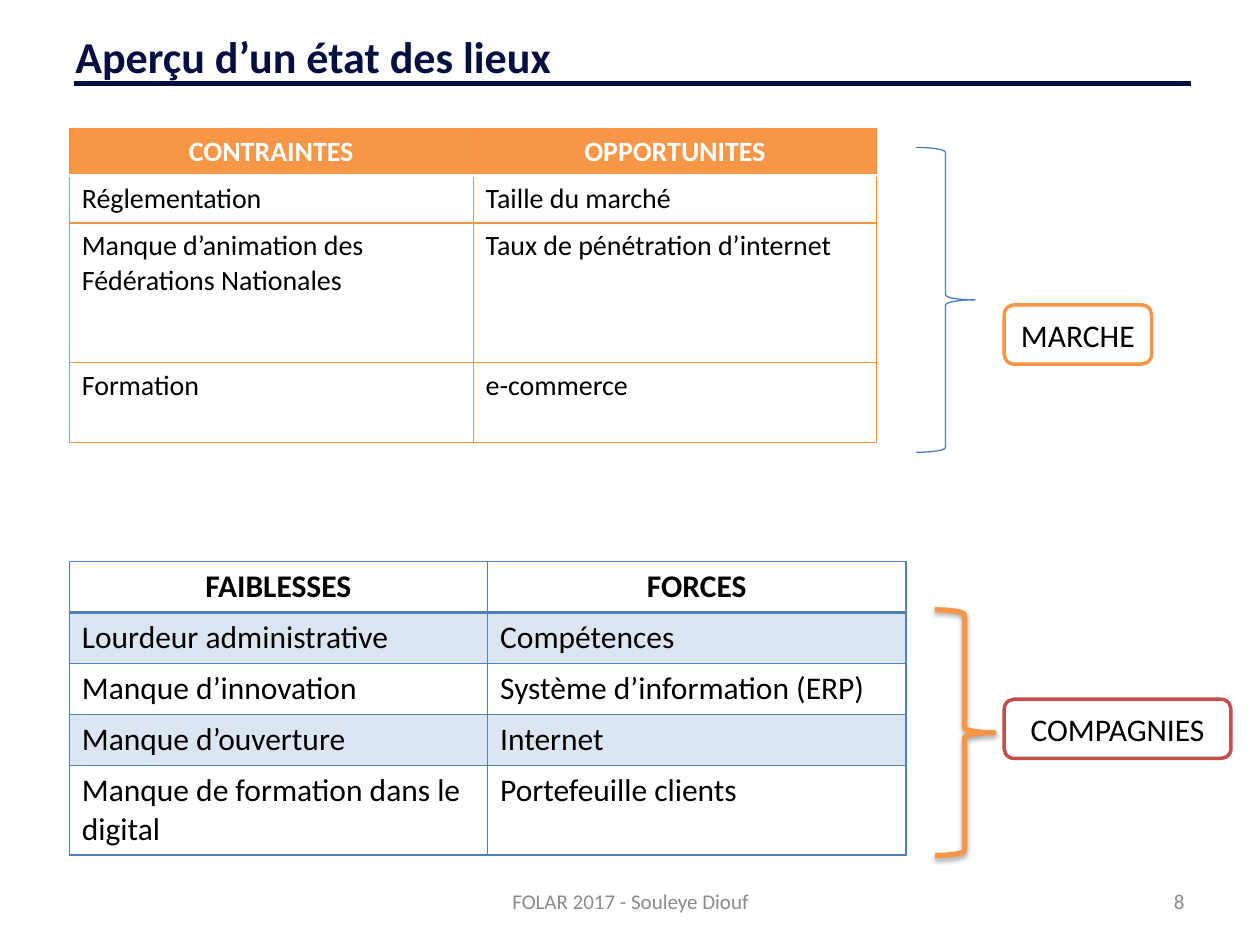
"""Build a slide of market and company strengths and limits."""
from lxml import etree
from pptx import Presentation
from pptx.dml.color import RGBColor
from pptx.enum.shapes import MSO_CONNECTOR, MSO_SHAPE
from pptx.enum.text import MSO_ANCHOR, PP_ALIGN
from pptx.oxml.ns import qn
from pptx.util import Inches, Pt

LINE, BRACE, ROUND = MSO_CONNECTOR.STRAIGHT, MSO_SHAPE.RIGHT_BRACE, MSO_SHAPE.ROUNDED_RECTANGLE
LEFT, MID, RIGHT = PP_ALIGN.LEFT, PP_ALIGN.CENTER, PP_ALIGN.RIGHT
CORE, TOP = MSO_ANCHOR.MIDDLE, MSO_ANCHOR.TOP
WIDE, HIGH = Inches(10), Inches(7.5)

THEME = {
    "font": "Calibri", "navy": "030F40", "white": "FFFFFF", "black": "000000",
    "gray": "8C8C8C", "amber": "F79646", "rust": "F69240", "blue": "4F81BD",
    "steel": "4B7EBC", "pale": "DCE6F2", "red": "C0504D",
    "title": 25.2, "large": 18, "body": 16, "small": 12,
}

TEXTS = [
    ("Aperçu d’un état des lieux", (5, 2.8, 90, 6.13), "title", "navy", True, LEFT),
    ("8", (71.7, 92.67, 23.3, 5.33), "small", "gray", False, RIGHT),
    ("FOLAR 2017 - Souleye Diouf", (34.2, 92.67, 31.7, 5.33), "small", "gray", False, MID),
]
RULE = (5.9, 8.8, 94.5, 8.8)
TABLES = [
    {
        "box": (5.5, 13.6, 64.1, 33.2), "rows": (5, 5, 14.8, 8.4), "size": "body",
        "edge": ("rust", 0.75), "base": ("white", 2), "ink": "white",
        "fills": ("amber", "white", "white", "white"),
        "cells": [
            ("CONTRAINTES", "OPPORTUNITES"),
            ("Réglementation", "Taille du marché"),
            ("Manque d’animation des Fédérations Nationales", "Taux de pénétration d’internet"),
            ("Formation", "e-commerce"),
        ],
    },
    {
        "box": (5.5, 59.4, 66.4, 31.1), "rows": (5.4, 5.4, 5.4, 5.4, 9.5), "size": "large",
        "edge": ("blue", 1), "base": ("blue", 2), "ink": "black",
        "fills": (None, "pale", None, "pale", None),
        "cells": [
            ("FAIBLESSES", "FORCES"),
            ("Lourdeur administrative", "Compétences"),
            ("Manque d’innovation", "Système d’information (ERP)"),
            ("Manque d’ouverture", "Internet"),
            ("Manque de formation dans le digital", "Portefeuille clients"),
        ],
    },
]
SHAPES = [
    (BRACE, (72.7, 15.6, 4.7, 32.27), "steel", 0.75, None),
    (ROUND, (79.7, 32.27, 11.7, 6.27), "amber", 2, "MARCHE"),
    (BRACE, (74.2, 64.53, 4.7, 26), "amber", 3, None),
    (ROUND, (79.7, 74, 18, 6.27), "red", 2, "COMPAGNIES"),
]
SHADE = {"blurRad": Pt(3.1), "dist": Pt(1.8), "dir": 5400000, "rotWithShape": 0}


def tone(name):
    return RGBColor.from_string(THEME[name])


def place(box):
    return [int(part * side / 100) for part, side in zip(box, (WIDE, HIGH) * 2)]


def node(host, tag, **attrs):
    return etree.SubElement(host, qn(tag), {key: str(val) for key, val in attrs.items()})


def write(frame, text, size, ink, bold, align):
    frame.word_wrap = True
    line = frame.paragraphs[0]
    line.alignment = align
    run = line.add_run()
    run.text = text
    looks = {"name": THEME["font"], "size": Pt(THEME[size]), "bold": bold}
    for key, val in looks.items():
        setattr(run.font, key, val)
    run.font.color.rgb = tone(ink)


def stroke(line, hue, width):
    line.color.rgb = tone(hue)
    line.width = Pt(width)


def edge(cell, sides):
    props = cell._tc.get_or_add_tcPr()
    for spot, (side, (hue, width)) in enumerate(sides.items()):
        line = node(props, f"a:ln{side}", w=Pt(width))
        node(node(line, "a:solidFill"), "a:srgbClr", val=THEME[hue])
        props.insert(spot, line)


def draw_table(slide, data):
    cells = data["cells"]
    left, top, wide, high = place(data["box"])
    grid = slide.shapes.add_table(len(cells), 2, left, top, wide, high).table
    for col in grid.columns:
        col.width = wide // 2
    for r, (texts, share, fill) in enumerate(zip(cells, data["rows"], data["fills"])):
        grid.rows[r].height = int(share * HIGH / 100)
        head = r == 0
        for c, text in enumerate(texts):
            cell = grid.cell(r, c)
            cell.vertical_anchor = TOP
            if fill:
                cell.fill.solid()
                cell.fill.fore_color.rgb = tone(fill)
            else:
                cell.fill.background()
            sides = dict.fromkeys("LRTB", data["edge"])
            if r < 2:
                sides["B" if head else "T"] = data["base"]
            edge(cell, sides)
            ink = data["ink"] if head else "black"
            write(cell.text_frame, text, data["size"], ink, head, MID if head else LEFT)


def draw_shape(slide, kind, box, hue, width, text):
    shape = slide.shapes.add_shape(kind, *place(box))
    shape.shadow.inherit = False
    stroke(shape.line, hue, width)
    if text:
        shape.fill.solid()
        shape.fill.fore_color.rgb = tone("white")
        shape.text_frame.vertical_anchor = CORE
        write(shape.text_frame, text, "large", "black", False, MID)
    else:
        shape.fill.background()
        if hue == "amber":
            glow = node(shape._element.spPr.find(qn("a:effectLst")), "a:outerShdw", **SHADE)
            node(node(glow, "a:srgbClr", val=THEME["black"]), "a:alpha", val=35000)


def main():
    deck = Presentation()
    deck.slide_width, deck.slide_height = WIDE, HIGH
    slide = deck.slides.add_slide(deck.slide_layouts[6])
    for text, box, *looks in TEXTS:
        frame = slide.shapes.add_textbox(*place(box)).text_frame
        frame.vertical_anchor = CORE
        write(frame, text, *looks)
    rule = slide.shapes.add_connector(LINE, *place(RULE))
    stroke(rule.line, "navy", 3)
    node(rule._element.spPr, "a:effectLst")
    for data in TABLES:
        draw_table(slide, data)
    for item in SHAPES:
        draw_shape(slide, *item)
    deck.save("out.pptx")


if __name__ == "__main__":
    main()
